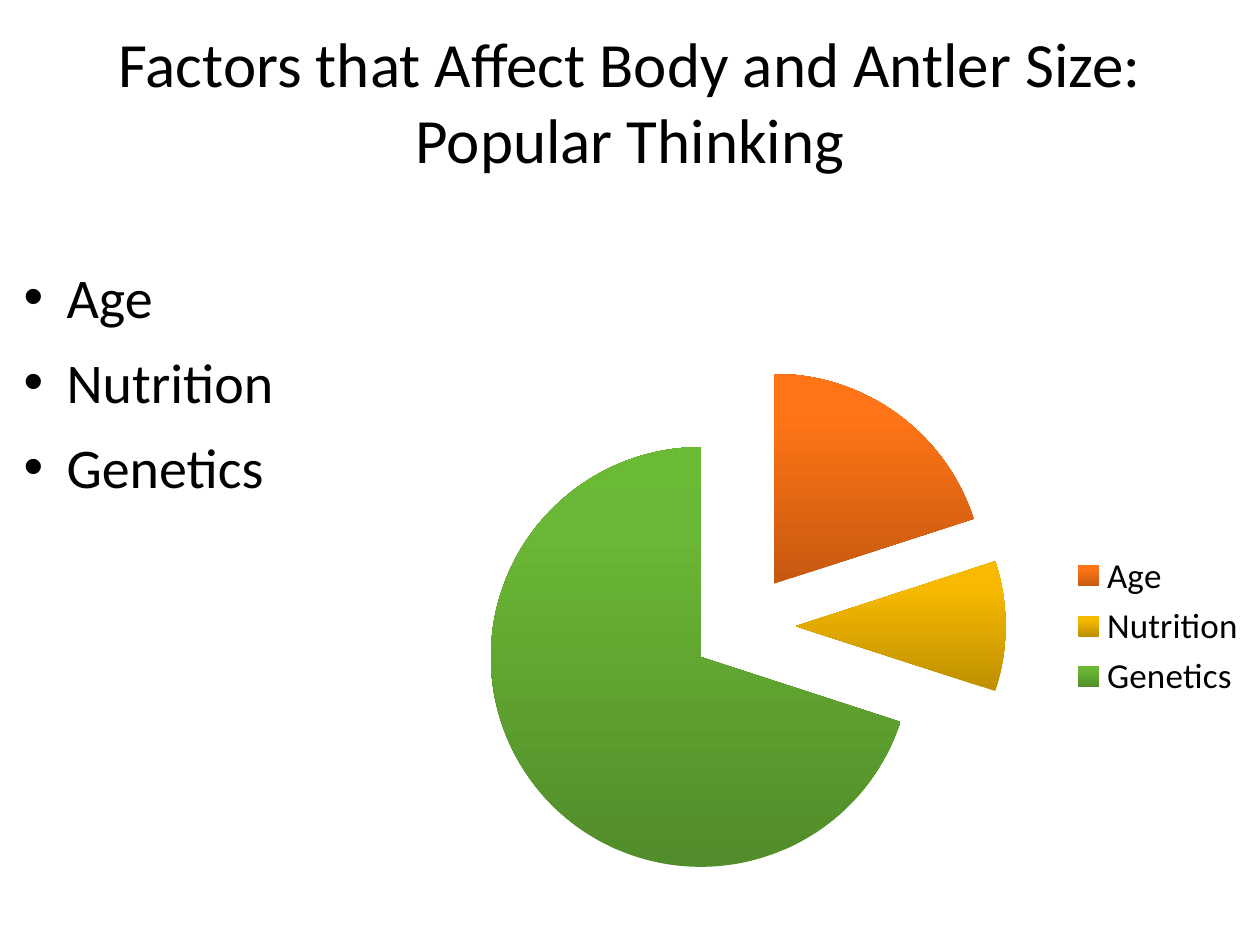
from copy import deepcopy

from lxml import etree
from pptx import Presentation
from pptx.chart import data
from pptx.dml import color
from pptx.enum import chart as ch, text
from pptx.oxml import ns
from pptx.util import Inches, Pt

COLORS = {
    "text": "000000",
    "Age": ("C65910", "FF7416", "FF7517"),
    "Nutrition": ("BE8F00", "F7BA00", "F8BB00"),
    "Genetics": ("518D2A", "6AB636", "6ABA34"),
}
SHARES = {"Age": 20, "Nutrition": 10, "Genetics": 70}
STOPS = (0, 0.8, 1)


def rgb(value):
    return color.RGBColor.from_string(value)


def apply(target, values):
    for name, value in values.items():
        setattr(target, name, value)


class FactorSlide:
    face = "Calibri"

    def __init__(self, deck):
        self.slide = deck.slides.add_slide(deck.slide_layouts[6])

    def style(self, font, size):
        apply(font, {"name": self.face, "size": Pt(size)})
        font.color.rgb = rgb(COLORS["text"])

    def text_frame(self, box, anchor):
        frame = self.slide.shapes.add_textbox(*map(Inches, box)).text_frame
        apply(frame, {"word_wrap": True, "vertical_anchor": anchor})
        return frame

    def title(self, words, box, size):
        frame = self.text_frame(box, text.MSO_ANCHOR.MIDDLE)
        heading = frame.paragraphs[0]
        apply(heading, {"text": words, "alignment": text.PP_ALIGN.CENTER})
        for run in heading.runs:
            self.style(run.font, size)

    def bullets(self, items, box, size):
        frame = self.text_frame(box, text.MSO_ANCHOR.TOP)
        for i, item in enumerate(items):
            line = frame.add_paragraph() if i else frame.paragraphs[0]
            apply(line, {"text": item, "line_spacing": 1.1,
                         "space_before": Pt(0.2 * size if i else 0)})
            props = line._p.get_or_add_pPr()
            props.set("marL", str(Inches(0.43)))
            props.set("indent", str(Inches(-0.34)))
            etree.SubElement(props, ns.qn("a:buFont"), typeface="Arial")
            etree.SubElement(props, ns.qn("a:buChar"), char="•")
            self.style(line.font, size)
            self.style(line.runs[0].font, size)

    def exploded_pie(self, shares, box, explosion):
        source = data.CategoryChartData()
        source.categories = list(shares)
        source.add_series("Series 1", list(shares.values()))
        pie = self.slide.shapes.add_chart(
            ch.XL_CHART_TYPE.PIE, *map(Inches, box), source).chart
        apply(pie, {"has_title": False, "has_legend": True})
        self.style(pie.font, 18)
        apply(pie.legend, {"position": ch.XL_LEGEND_POSITION.RIGHT,
                           "include_in_layout": False})
        self.style(pie.legend.font, 20)
        pie.plots[0].vary_by_categories = True

        # Slices shade upward from dark to bright
        series = pie.plots[0].series[0]
        for i, factor in enumerate(shares):
            fill = series.points[i].format.fill
            fill.gradient()
            fill.gradient_angle = 90
            stop_list = series._element.findall(".//" + ns.qn("a:gsLst"))[i]
            stop_list.append(deepcopy(stop_list[-1]))
            for stop, place, shade in zip(fill.gradient_stops, STOPS, COLORS[factor]):
                stop.position = place
                stop.color.rgb = rgb(shade)

        # Pull all slices apart
        gap = etree.Element(ns.qn("c:explosion"), val=str(explosion))
        series._element.find(ns.qn("c:dPt")).addprevious(gap)


def main():
    deck = Presentation()
    apply(deck, {"slide_width": Inches(10), "slide_height": Inches(7.5)})
    factors = FactorSlide(deck)
    factors.title("Factors that Affect Body and Antler Size:\vPopular Thinking",
                  (0, 0.17, 10, 1.25), 36)
    factors.bullets(SHARES, (0, 1.98, 5.67, 4.85), 32)
    factors.exploded_pie(SHARES, (3.33, 2.75, 6.67, 4.44), 25)
    deck.save("out.pptx")


if __name__ == "__main__":
    main()
